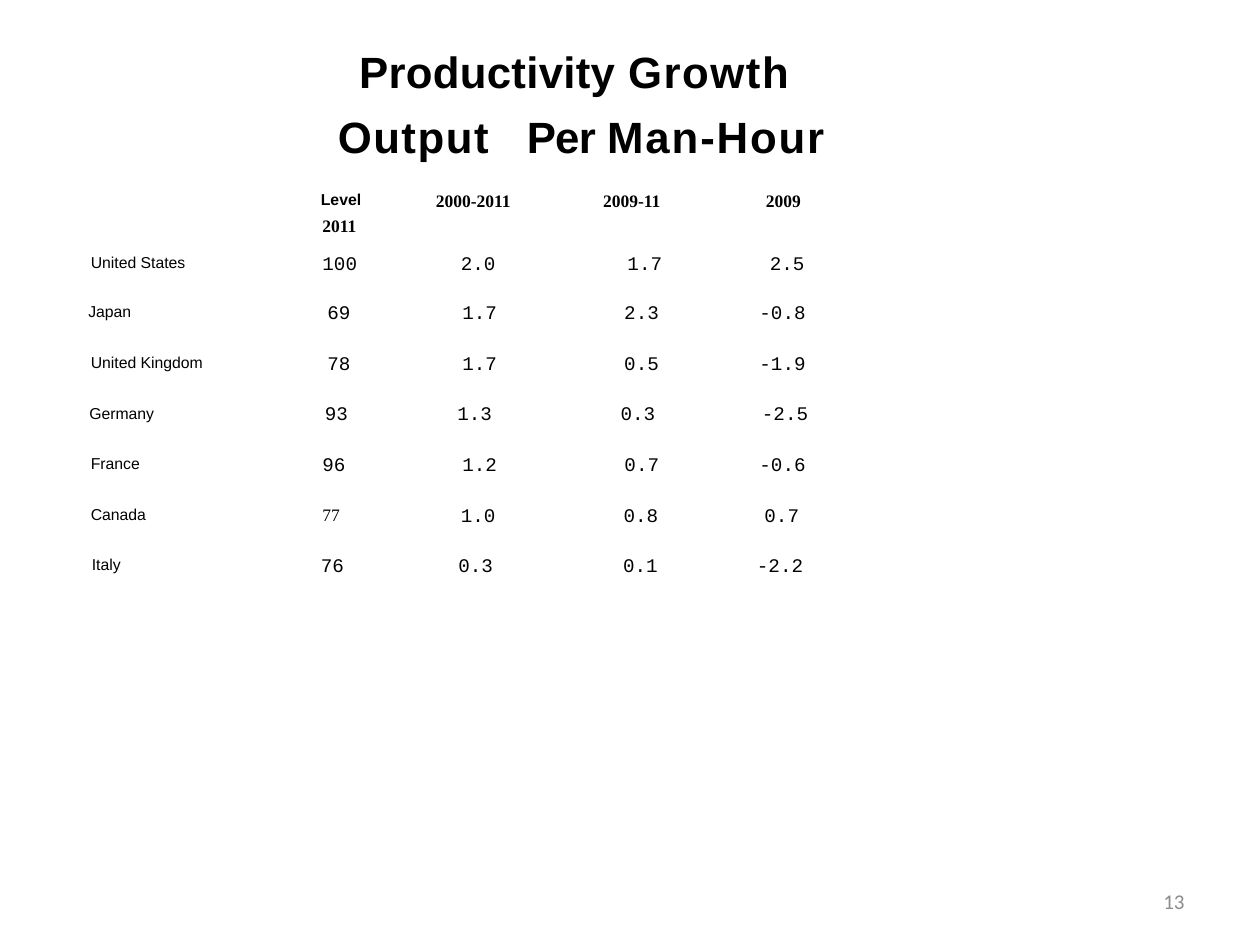
from dataclasses import dataclass
from lxml.etree import SubElement
from pptx import Presentation
from pptx.dml.color import RGBColor as Color
from pptx.enum.text import MSO_ANCHOR as Anchor, PP_ALIGN as Align
from pptx.oxml.ns import qn
from pptx.util import Cm, Pt


@dataclass(frozen=True)
class Style:
    font: str
    size: float
    bold: bool = False
    color: str = "000000"


@dataclass(frozen=True)
class Theme:
    title: Style = Style("Arial", 25, True)
    level: Style = Style("Arial", 9, True)
    period: Style = Style("Times New Roman", 10, True)
    country: Style = Style("Arial", 9)
    figure: Style = Style("Courier New", 11)
    serif_figure: Style = Style("Times New Roman", 10)
    number: Style = Style("Calibri", 12, color="8C8C8C")


THEME = Theme()

TITLE = [("Productivity ", 20), ("Growth Output\t", 90), ("Per ", -40), ("Man-Hour", 110)]
PAGE_NUMBER = "13"

HEADINGS = [("2000-2011", 0.69), ("2009-11", 0.66), ("2009", 0.94)]
LEVEL_HEADING = [("Level", 0.71, THEME.level, 0), ("2011", 0.74, THEME.period, 4.7)]

COUNTRIES = [
    [("United States", 0.13), ("100", 0.74), ("2.0", 1.19), ("1.7", 0), ("2.5", 1.02)],
    [("Japan", 0.08), ("69", 0.84), ("1.7", 1.22), ("2.3", 0.13), ("-0.8", 0.81)],
    [("United Kingdom", 0.13), ("78", 0.84), ("1.7", 1.22), ("0.5", 0.13), ("-1.9", 0.81)],
    [("Germany", 0.1), ("93", 0.79), ("1.3", 1.12), ("0.3", 0.28), ("-2.5", 0.86)],
    [("France", 0.13), ("96", 0.74), ("1.2", 1.22), ("0.7", 1.09), ("-0.6", 0.81)],
    [("Canada", 0.13), ("77", 0.74), ("1.0", 1.19), ("0.8", 1.07), ("0.7", 0.91)],
    [("Italy", 0.15), ("76", 0.71), ("0.3", 1.14), ("0.1", 0.18), ("-2.2", 0.76)],
]
CENTRED = {("United States", 3), ("Japan", 3), ("United Kingdom", 3), ("Germany", 3), ("Italy", 3)}
SERIF = {("Canada", 1)}

TABLE_LEFT, TABLE_TOP = 1.7, 3.86
COLUMN_WIDTHS = [4.06, 2.34, 3.4, 3, 1.91]
ROW_HEIGHTS = [1.27, 0.99] + [1.02] * 5 + [0.81]


def add_span(para, text, style, spacing=0):
    span = para.add_run()
    span.text = text
    span.font.name = style.font
    span.font.size = Pt(style.size)
    span.font.bold = style.bold
    span.font.color.rgb = Color.from_string(style.color)
    if spacing:
        span._r.get_or_add_rPr().set("spc", str(spacing))


def set_indent(para, left, first=0):
    properties = para._p.get_or_add_pPr()
    properties.set("marL", str(Cm(left)))
    properties.set("indent", str(Cm(first)))
    return properties


def add_box(page, left, top, width, height):
    box = page.shapes.add_textbox(Cm(left), Cm(top), Cm(width), Cm(height))
    box.text_frame.word_wrap = True
    return box.text_frame


def clear_margins(target):
    target.margin_left = target.margin_right = Cm(0)
    target.margin_top = target.margin_bottom = Cm(0)


def add_title(page):
    frame = add_box(page, 6.78, 0.64, 11.35, 2.31)
    clear_margins(frame)
    para = frame.paragraphs[0]
    para.line_spacing = 1.24
    tabs = SubElement(set_indent(para, 0.03, 0.43), qn("a:tabLst"))
    SubElement(tabs, qn("a:tab"), pos=str(Cm(3.58)), algn="l")
    for text, spacing in TITLE:
        add_span(para, text, THEME.title, spacing)


def fill_cell(cell, text, offset, style, centred=False):
    para = cell.text_frame.paragraphs[0]
    if centred:
        para.alignment = Align.CENTER
        cell.margin_right = Cm(offset)
    else:
        set_indent(para, offset)
    add_span(para, text, style)


def add_growth_table(page):
    table = page.shapes.add_table(
        len(ROW_HEIGHTS), len(COLUMN_WIDTHS), Cm(TABLE_LEFT), Cm(TABLE_TOP),
        Cm(sum(COLUMN_WIDTHS)), Cm(sum(ROW_HEIGHTS))).table
    table.first_row = table.horz_banding = False
    for column, width in zip(table.columns, COLUMN_WIDTHS):
        column.width = Cm(width)
    for row, height in zip(table.rows, ROW_HEIGHTS):
        row.height = Cm(height)
    for cell in table.iter_cells():
        clear_margins(cell)
        cell.fill.background()

    frame = table.cell(0, 1).text_frame
    for index, (text, indent, style, before) in enumerate(LEVEL_HEADING):
        para = frame.add_paragraph() if index else frame.paragraphs[0]
        set_indent(para, indent)
        para.space_before = Pt(before)
        add_span(para, text, style)
    for column, (text, indent) in enumerate(HEADINGS, 2):
        fill_cell(table.cell(0, column), text, indent, THEME.period)

    for row, entries in enumerate(COUNTRIES, 1):
        country = entries[0][0]
        for column, (text, offset) in enumerate(entries):
            key = (country, column)
            style = THEME.figure if column else THEME.country
            if key in SERIF:
                style = THEME.serif_figure
            fill_cell(table.cell(row, column), text, offset, style, key in CENTRED)


def add_page_number(page):
    frame = add_box(page, 18.21, 17.65, 5.92, 1.02)
    frame.vertical_anchor = Anchor.MIDDLE
    para = frame.paragraphs[0]
    para.alignment = Align.RIGHT
    add_span(para, PAGE_NUMBER, THEME.number)


def main():
    deck = Presentation()
    deck.slide_width, deck.slide_height = Cm(25.4), Cm(19.05)
    page = deck.slides.add_slide(deck.slide_layouts[6])
    add_title(page)
    add_growth_table(page)
    add_page_number(page)
    deck.save("out.pptx")


if __name__ == "__main__":
    main()
